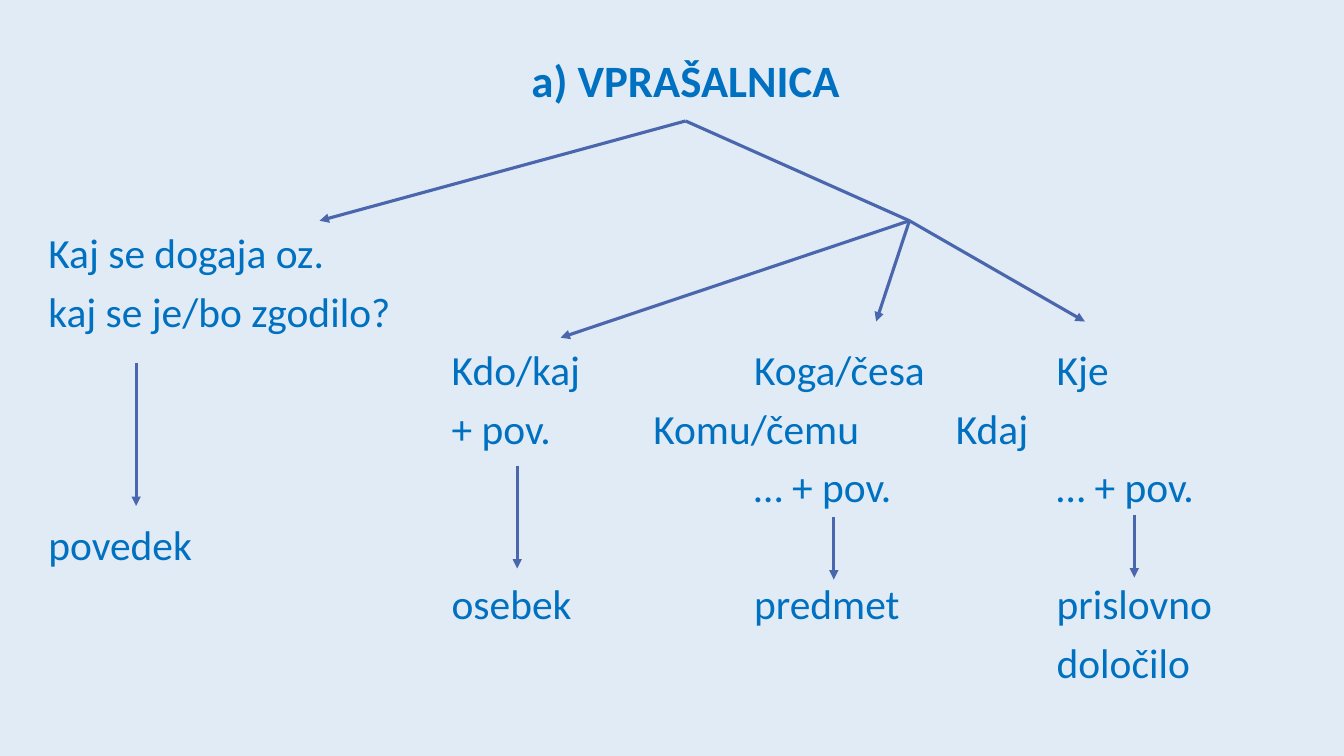
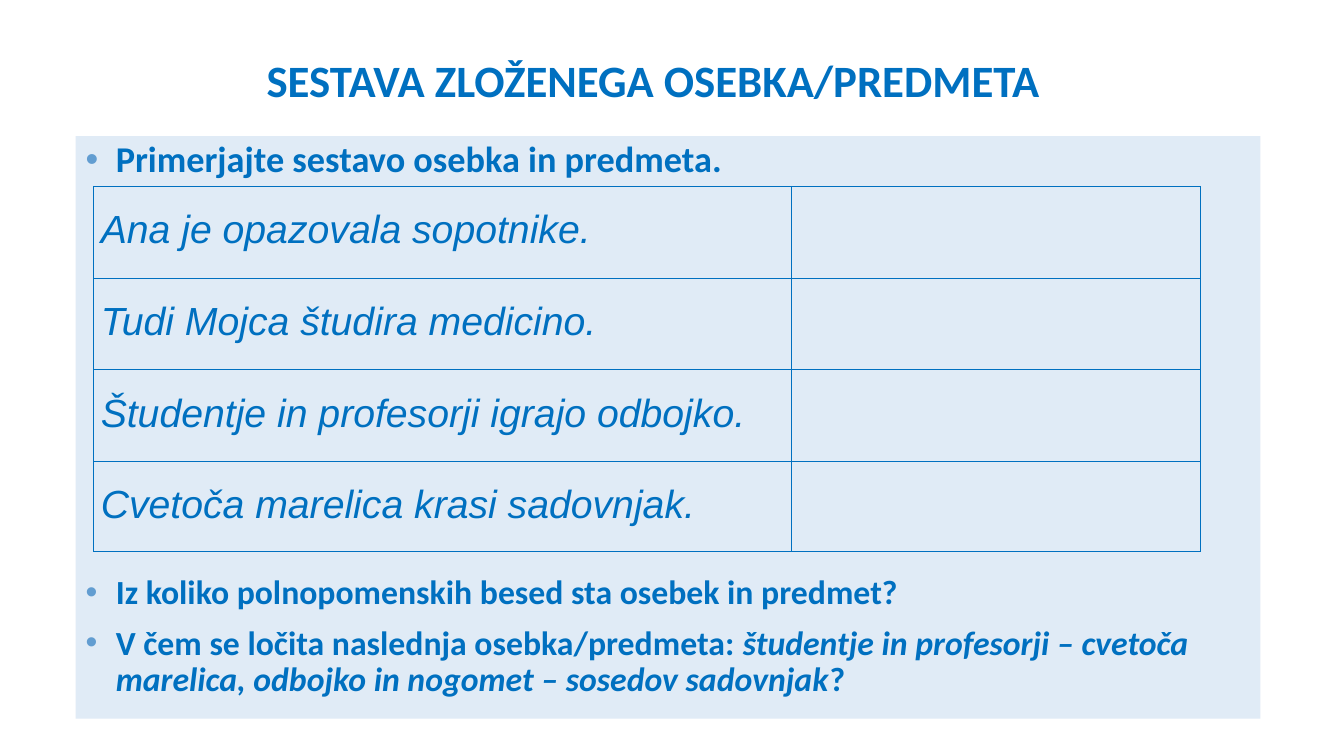
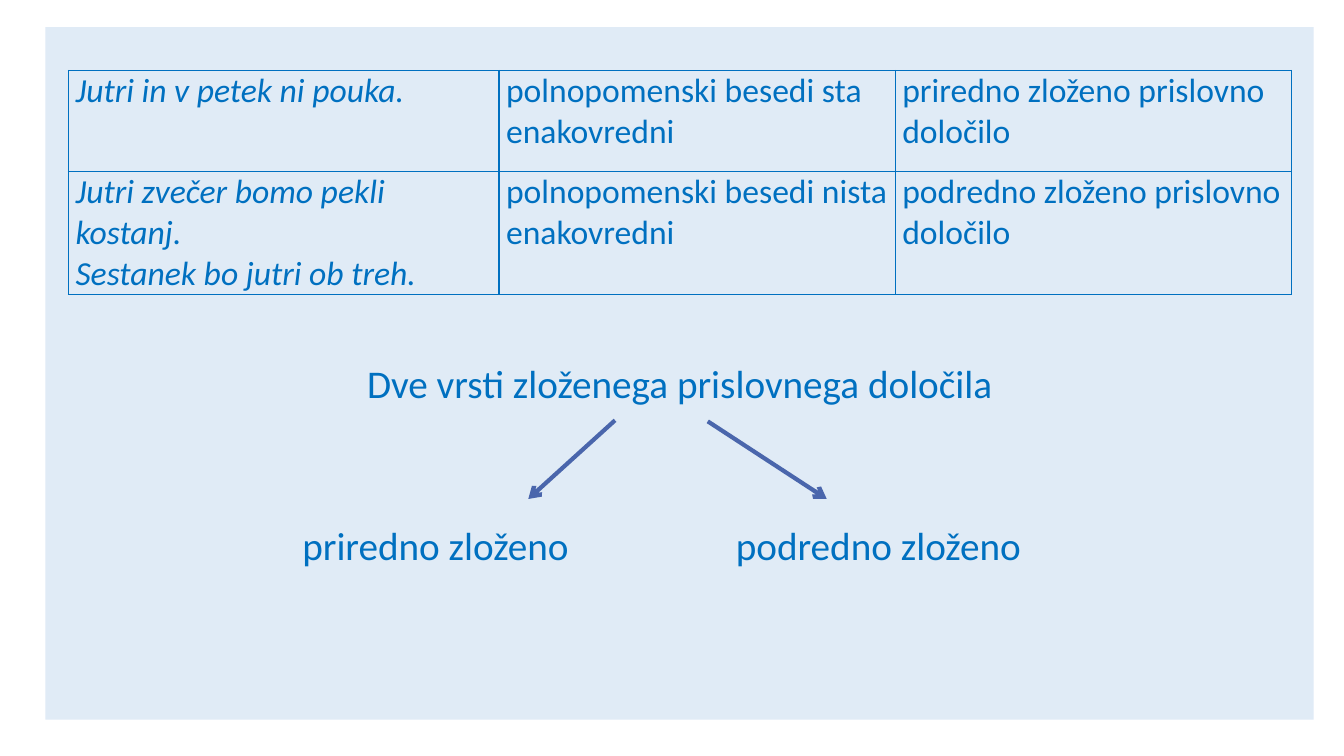
"""Build three Slovene grammar slides on question words and compound sentence parts."""
import pptx
import pptx.chart.data
import pptx.dml.color
import pptx.enum.shapes
import pptx.enum.text
import pptx.oxml
import pptx.util
from pptx.oxml.ns import nsdecls
from pptx.util import Inches, Pt

BLUE, PALE, ARROW, BULLET = "0070C0", "E0EBF6", "4A66AC", "629DD1"
FONT = "Calibri"
ALIGN = pptx.enum.text.PP_ALIGN
ANCHOR = pptx.enum.text.MSO_ANCHOR

QUESTION_TITLE = "a) VPRAŠALNICA"
ROW_TOP, ROW_PITCH = 2.31, 0.58
LABELS = [
    (0.48, 0, ["Kaj se dogaja oz.", "kaj se je/bo zgodilo?"]),
    (0.48, 5, ["povedek"]),
    (4.48, 2, ["Kdo/kaj", "+ pov."]),
    (4.48, 6, ["osebek"]),
    (7.48, 2, ["Koga/česa"]),
    (6.48, 3, ["Komu/čemu"]),
    (7.48, 4, ["… + pov."]),
    (7.48, 6, ["predmet"]),
    (10.48, 2, ["Kje"]),
    (9.48, 3, ["Kdaj"]),
    (10.48, 4, ["… + pov."]),
    (10.48, 6, ["prislovno", "določilo"]),
]
TITLE_FOOT, FORK = (6.8, 1.2), (9.02, 2.19)
TITLE_BRANCHES = [((3.17, 2.19), "triangle"), (FORK, None)]
FORK_TIPS = [(5.56, 3.35), (8.69, 3.19), (10.76, 3.19)]
DOWN_ARROWS = [(1.35, 3.6, 5.02), (5.13, 4.62, 5.64), (8.27, 5.13, 5.75), (11.25, 5.11, 5.73)]

STRUCTURE_TITLE = "SESTAVA ZLOŽENEGA OSEBKA/PREDMETA"
TASK = [[("Primerjajte sestavo osebka in predmeta.", False)]]
SENTENCES = [
    ["Ana je opazovala sopotnike.", ""],
    ["Tudi Mojca študira medicino.", ""],
    ["Študentje in profesorji igrajo odbojko.", ""],
    ["Cvetoča marelica krasi sadovnjak.", ""],
]
QUESTIONS = [
    [("Iz koliko polnopomenskih besed sta osebek in predmet?", False)],
    [
        ("V čem se ločita naslednja osebka/predmeta:", False),
        (" študentje in profesorji – cvetoča marelica, odbojko in nogomet – sosedov sadovnjak", True),
        ("?", False),
    ],
]

ADVERBIALS = [
    ["Jutri in v petek ni pouka.", "polnopomenski besedi sta enakovredni",
     "priredno zloženo prislovno določilo"],
    ["Jutri zvečer bomo pekli kostanj.\nSestanek bo jutri ob treh.",
     "polnopomenski besedi nista enakovredni", "podredno zloženo prislovno določilo"],
]
KINDS_HEADING = "Dve vrsti zloženega prislovnega določila"
KINDS = [(2.9, "priredno zloženo"), (7.2, "podredno zloženo")]
KIND_ARROWS = [((6.1, 4.17), (5.24, 4.95)), ((7.02, 4.18), (8.2, 4.95))]


def rgb(color):
    return pptx.dml.color.RGBColor.from_string(color)


def style(p, size, bold=False, italic=False, font=FONT):
    for r in p.runs:
        r.font.name, r.font.size = font, Pt(size)
        r.font.bold, r.font.italic = bold, italic
        r.font.color.rgb = rgb(BLUE)


def add_slide(prs, background):
    s = prs.slides.add_slide(prs.slide_layouts[6])
    s.background.fill.solid()
    s.background.fill.fore_color.rgb = rgb(background)
    return s


def add_text(s, box, lines, size, bold=False, align=ALIGN.LEFT, spacing=1.0, inset=0.1):
    sp = s.shapes.add_textbox(*map(Inches, box))
    tf = sp.text_frame
    tf.word_wrap = True
    tf.margin_left = tf.margin_right = Inches(inset)
    tf.margin_top = tf.margin_bottom = Inches(inset / 2)
    tf.text = "\n".join(lines)
    for i, p in enumerate(tf.paragraphs):
        p.alignment, p.line_spacing = align, spacing
        p.space_before = Pt(10 if i else 0)
        style(p, size, bold)
    return sp


def add_title(s, left, width, text):
    sp = add_text(s, (left, 0.44, width, 0.76), [text], 32, True, ALIGN.CENTER, 0.9)
    sp.text_frame.vertical_anchor = ANCHOR.MIDDLE
    return sp


def add_panel(s, box):
    sp = s.shapes.add_shape(pptx.enum.shapes.MSO_SHAPE.RECTANGLE, *map(Inches, box))
    sp.shadow.inherit = False
    sp.fill.solid()
    sp.fill.fore_color.rgb = rgb(PALE)
    sp.line.fill.background()
    return sp


def add_bullets(tf, paragraphs, size):
    tf.word_wrap = True
    tf.vertical_anchor = ANCHOR.TOP
    for i, parts in enumerate(paragraphs):
        p = tf.add_paragraph() if i else tf.paragraphs[0]
        pPr = p._p.get_or_add_pPr()
        pPr.set("marL", str(Inches(0.3)))
        pPr.set("indent", str(-Inches(0.3)))
        for xml in (f'<a:buClr {nsdecls("a")}><a:srgbClr val="{BULLET}"/></a:buClr>',
                    f'<a:buFont {nsdecls("a")} typeface="Arial"/>',
                    f'<a:buChar {nsdecls("a")} char="•"/>'):
            pPr.append(pptx.oxml.parse_xml(xml))
        p.alignment, p.line_spacing = ALIGN.LEFT, 0.9
        p.space_before = Pt(10 if i else 0)
        for text, _ in parts:
            p.add_run().text = text
        style(p, size, True)
        for r, (_, italic) in zip(p.runs, parts):
            r.font.italic = italic


def add_line(s, start, end, width, head=None):
    points = map(Inches, (*start, *end))
    line = s.shapes.add_connector(pptx.enum.shapes.MSO_CONNECTOR.STRAIGHT, *points)
    line.line.color.rgb = rgb(ARROW)
    line.line.width = Pt(width)
    if head:
        line.line._get_or_add_ln().append(
            pptx.oxml.parse_xml(f'<a:tailEnd {nsdecls("a")} type="{head}"/>'))
    line._element.spPr.append(pptx.oxml.parse_xml(f'<a:effectLst {nsdecls("a")}/>'))
    return line


def add_borders(cell):
    tcPr = cell._tc.get_or_add_tcPr()
    for i, side in enumerate("LRTB"):
        tcPr.insert(i, pptx.oxml.parse_xml(
            f'<a:ln{side} {nsdecls("a")} w="{Pt(1)}"><a:solidFill>'
            f'<a:srgbClr val="{BLUE}"/></a:solidFill></a:ln{side}>'))


def add_grid(s, left, top, widths, heights, rows, size, spacing=1.0, font=FONT):
    frame = s.shapes.add_table(len(rows), len(widths), Inches(left), Inches(top),
                               Inches(sum(widths)), Inches(sum(heights)))
    table = frame.table
    table.first_row = table.horz_banding = False
    for column, width in zip(table.columns, widths):
        column.width = Inches(width)
    for row, height, texts in zip(table.rows, heights, rows):
        row.height = Inches(height)
        for i, (cell, text) in enumerate(zip(row.cells, texts)):
            cell.fill.background()
            add_borders(cell)
            cell.margin_left = cell.margin_right = Inches(0.07)
            cell.margin_top = cell.margin_bottom = 0
            cell.text_frame.text = text
            for p in cell.text_frame.paragraphs:
                p.line_spacing = spacing
                style(p, size, italic=i == 0, font=font)


def build_questions(prs):
    s = add_slide(prs, PALE)
    title = add_title(s, 2.09, 9.42, QUESTION_TITLE)
    for left, row, lines in LABELS:
        box = (left, ROW_TOP + row * ROW_PITCH, 3.8 if left < 1 else 2.5, len(lines) * ROW_PITCH)
        add_text(s, box, lines, 29.6, spacing=0.9, inset=0)
    for tip, head in TITLE_BRANCHES:
        add_line(s, TITLE_FOOT, tip, 2.25, head).begin_connect(title, 2)
    for tip in FORK_TIPS:
        add_line(s, FORK, tip, 2.25, "triangle")
    for x, top, bottom in DOWN_ARROWS:
        add_line(s, (x, top), (x, bottom), 2.25, "triangle")


def build_structure(prs):
    s = add_slide(prs, "FFFFFF")
    add_title(s, 0.93, 11.1, STRUCTURE_TITLE)
    panel = add_panel(s, (0.75, 1.35, 11.75, 5.78))
    add_bullets(panel.text_frame, TASK, 25.9)
    add_grid(s, 0.93, 1.85, [6.92, 4.06], [0.91, 0.91, 0.91, 0.89], SENTENCES, 28, 1.5, "Arial")
    questions = s.shapes.add_textbox(*map(Inches, (0.75, 5.66, 11.75, 1.4)))
    add_bullets(questions.text_frame, QUESTIONS, 24.1)


def build_adverbials(prs):
    s = add_slide(prs, "FFFFFF")
    add_panel(s, (0.45, 0.27, 12.58, 6.87))
    add_grid(s, 0.68, 0.7, [4.27, 3.93, 3.93], [1, 1.2], ADVERBIALS, 24)
    add_text(s, (0.45, 3.52, 12.58, 0.57), [KINDS_HEADING], 28, align=ALIGN.CENTER)
    for left, text in KINDS:
        add_text(s, (left, 5.12, 4.12, 0.57), [text], 28)
    for start, end in KIND_ARROWS:
        add_line(s, start, end, 3, "arrow")


def main():
    prs = pptx.Presentation()
    prs.slide_width, prs.slide_height = Inches(13.33), Inches(7.5)
    build_questions(prs)
    build_structure(prs)
    build_adverbials(prs)
    prs.save("out.pptx")


if __name__ == "__main__":
    main()
